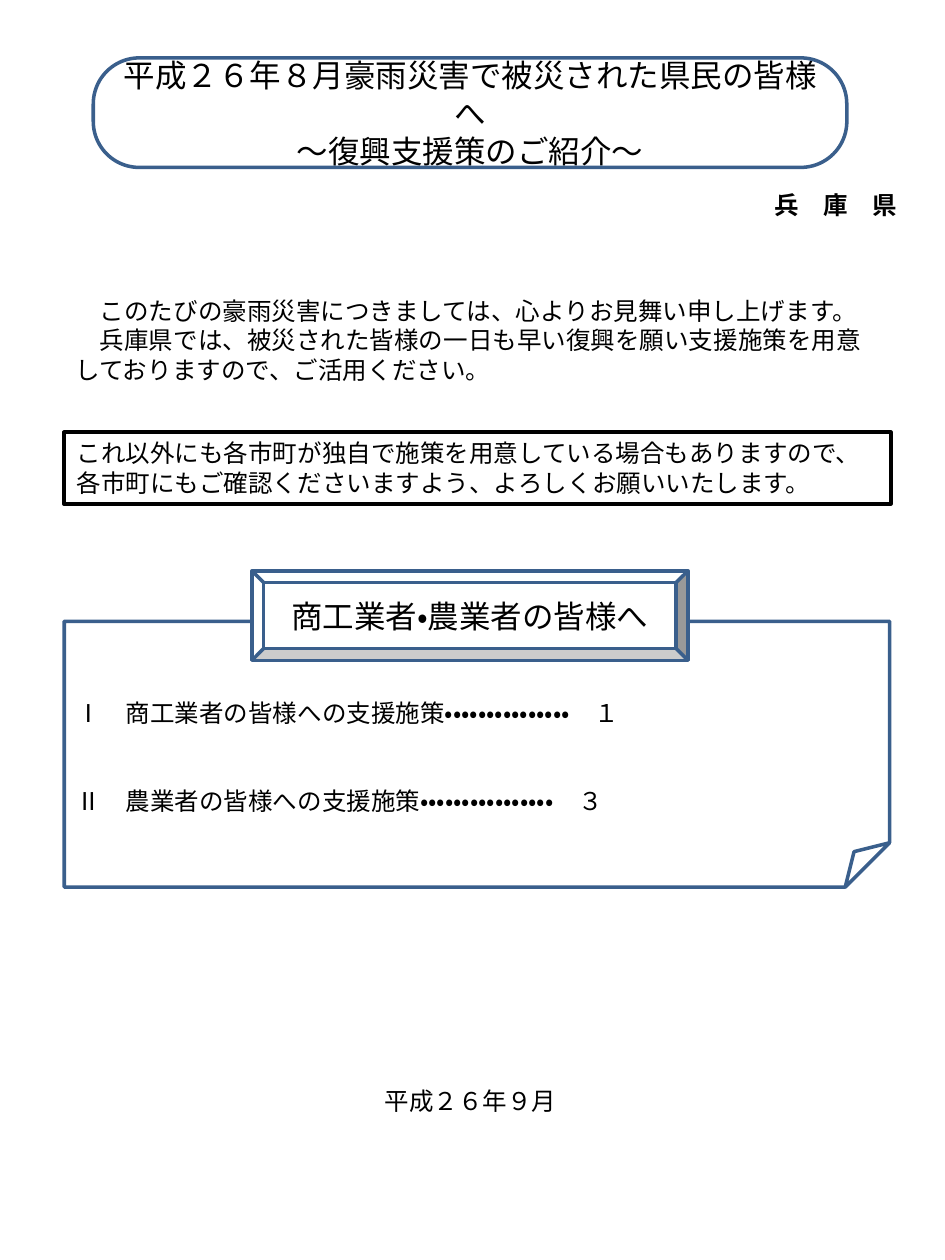
import pptx
import pptx.util
import pptx.dml.color
import pptx.enum.lang
import pptx.enum.shapes
import pptx.enum.text

Pt = pptx.util.Pt
SHAPE = pptx.enum.shapes.MSO_SHAPE
ALIGN = pptx.enum.text.PP_ALIGN
ANCHOR = pptx.enum.text.MSO_ANCHOR
COLORS = {"ink": "000000", "blue": "3A5F8C", "paper": "FFFFFF"}
LATIN = "Calibri"
GOTHIC = "Noto Sans CJK JP"


class Flyer:
    def __init__(self, slide):
        self.slide = slide

    def color(self, name):
        return pptx.dml.color.RGBColor.from_string(COLORS[name])

    def set_lines(self, sp, lines, size=14, font=LATIN, align=ALIGN.LEFT,
                  anchor=ANCHOR.TOP, bold=False, gap=0, inset=7.2):
        tf = sp.text_frame
        tf.word_wrap = True
        tf.auto_size = pptx.enum.text.MSO_AUTO_SIZE.NONE
        tf.vertical_anchor = anchor
        tf.margin_left = tf.margin_right = Pt(inset)
        tf.margin_top = tf.margin_bottom = Pt(3.6)
        for i, line in enumerate(lines):
            p = tf.add_paragraph() if i else tf.paragraphs[0]
            p.alignment = align
            p.space_before = Pt(gap if i else 0)
            r = p.add_run()
            r.text = line
            r.font.name = font
            r.font.size = Pt(size)
            r.font.bold = bold
            r.font.color.rgb = self.color("ink")
            r.font.language_id = pptx.enum.lang.MSO_LANGUAGE_ID.JAPANESE

    def title(self, box, lines, **style):
        sp = self.slide.shapes.title
        sp.left, sp.top, sp.width, sp.height = map(Pt, box)
        self.set_lines(sp, lines, 18, align=ALIGN.CENTER, anchor=ANCHOR.MIDDLE, **style)

    def text(self, box, lines, **style):
        sp = self.slide.shapes.add_textbox(*map(Pt, box))
        self.set_lines(sp, lines, **style)

    def shape(self, kind, box, line="blue", weight=2, fill=None, adj=None, lines=(), **style):
        sp = self.slide.shapes.add_shape(kind, *map(Pt, box))
        sp.shadow.inherit = False
        if adj is not None:
            sp.adjustments[0] = adj
        if fill:
            sp.fill.solid()
            sp.fill.fore_color.rgb = self.color(fill)
        else:
            sp.fill.background()
        sp.line.color.rgb = self.color(line)
        sp.line.width = Pt(weight)
        if lines:
            self.set_lines(sp, lines, **style)


def main():
    prs = pptx.Presentation()
    prs.slide_width, prs.slide_height = Pt(540), Pt(720)
    s = Flyer(prs.slides.add_slide(prs.slide_layouts[5]))

    title_box = (53.3, 33.1, 430.6, 62.6)
    s.shape(SHAPE.ROUNDED_RECTANGLE, title_box, adj=0.42)
    s.title(title_box, ["平成２６年８月豪雨災害で被災された県民の皆様へ",
                        "～復興支援策のご紹介～"], inset=15)
    s.text((423.4, 105.1, 108, 24.5), ["兵　庫　県"], align=ALIGN.CENTER, bold=True)

    s.text((36, 165.6, 472.3, 58.3), [
        "　このたびの豪雨災害につきましては、心よりお見舞い申し上げます。",
        "　兵庫県では、被災された皆様の一日も早い復興を願い支援施策を用意しておりますので、ご活用ください。"])
    s.shape(SHAPE.RECTANGLE, (36.7, 247, 472.3, 41), line="ink", weight=2.25, lines=[
        "これ以外にも各市町が独自で施策を用意している場合もありますので、各市町にもご確認くださいますよう、よろしくお願いいたします。"])

    s.shape(SHAPE.FOLDED_CORNER, (36.7, 355, 471.6, 151.9))
    s.shape(SHAPE.BEVEL, (144, 326.2, 249.1, 51.1), fill="paper", adj=0.13,
            lines=["商工業者・農業者の皆様へ"], size=18,
            align=ALIGN.CENTER, anchor=ANCHOR.MIDDLE)
    s.text((36.7, 395.3, 472.3, 74.9), [
        "Ⅰ　商工業者の皆様への支援施策・・・・・・・・・・・・・・・　１",
        "Ⅱ　農業者の皆様への支援施策・・・・・・・・・・・・・・・・　３"],
        font=GOTHIC, gap=33.6)

    s.text((205.2, 617, 127.4, 24.5), ["平成２６年９月"], font=GOTHIC, align=ALIGN.CENTER)
    prs.save("out.pptx")


if __name__ == "__main__":
    main()
